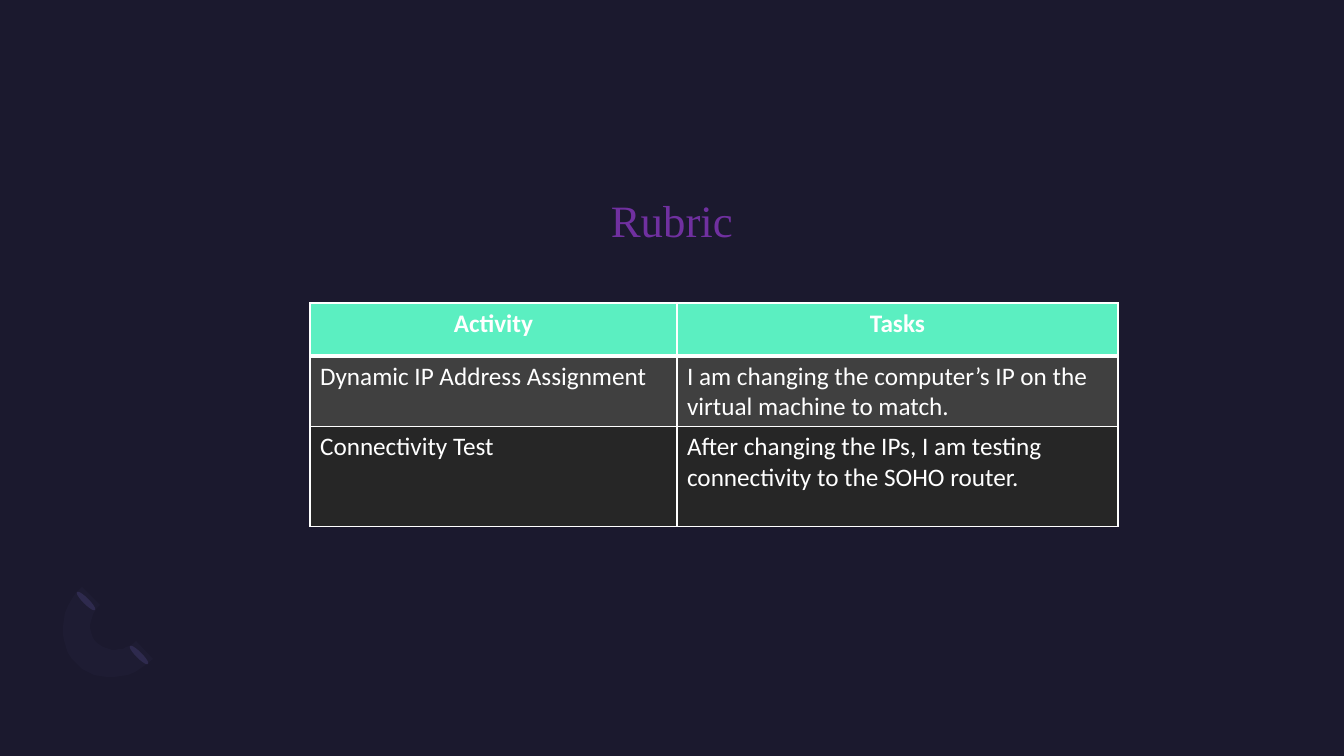
from lxml import etree
from pptx import Presentation
from pptx.dml.color import RGBColor
from pptx.enum.shapes import MSO_SHAPE
from pptx.enum.text import MSO_ANCHOR, PP_ALIGN
from pptx.oxml.ns import qn
from pptx.util import Pt

OVAL = MSO_SHAPE.OVAL
MID = MSO_ANCHOR.MIDDLE
CENTER, LEFT = PP_ALIGN.CENTER, PP_ALIGN.LEFT

COLORS = {
    "back": "1B192E", "title": "7030A0", "text": "FFFFFF", "head": "5BEFC1",
    "odd": "404040", "even": "262626", "oval": "2C284A", "arc": "7771B2",
}
TITLE = "Rubric"
ROWS = [
    ("Activity", "Tasks"),
    ("Dynamic IP Address Assignment",
     "I am changing the computer’s IP on the virtual machine to match."),
    ("Connectivity Test",
     "After changing the IPs, I am testing connectivity to the SOHO router."),
]
FILLS = ["head", "odd", "even"]
TITLE_BOX = (540, 200, 264, 47)
TABLE_AT = (310, 303)
WIDTHS = [367, 441]
HEIGHTS = [53, 70, 100]
OVALS = [(136, 642), (83, 588)]
OVAL_SIZE = (6, 26)
ARC = [
    [(77, 664), (56, 644), (58, 610), (82, 587)],
    [(100, 605), (88, 616), (87, 634), (97, 643)],
    [(97, 643), (107, 653), (124, 652), (136, 641)],
    [(153, 659), (131, 681), (96, 684), (77, 664)],
]
STEPS = 12
ARC_ALPHA = 4
TITLE_FORMAT = {"name": "Times New Roman", "size": Pt(32)}
CELL_FORMAT = {"name": "Calibri", "size": Pt(18)}
PAR_FORMAT = {"line_spacing": 0.9, "space_before": Pt(10), "space_after": Pt(8)}
SCALE = 914400 / 100.8


def px(*vals):
    return [round(v * SCALE) for v in vals]


def rgb(name):
    return RGBColor.from_string(COLORS[name])


def apply(item, vals):
    for key, val in vals.items():
        setattr(item, key, val)


def paint(shape, name):
    shape.shadow.inherit = False
    shape.fill.solid()
    shape.fill.fore_color.rgb = rgb(name)
    shape.line.fill.background()


def write(frame, text, form, color, align):
    par = frame.paragraphs[0]
    par.alignment = align
    run = par.add_run()
    run.text = text
    apply(run.font, form)
    run.font.color.rgb = rgb(color)
    return par


def curve(pts):
    for step in range(STEPS + 1):
        t = step / STEPS
        parts = ((1 - t) ** 3, 3 * t * (1 - t) ** 2, 3 * t * t * (1 - t), t ** 3)
        yield tuple(sum(w * p[axis] for w, p in zip(parts, pts)) for axis in (0, 1))


def border(cell, sides):
    props = cell._tc.get_or_add_tcPr()
    for spot, (side, width) in enumerate(sides.items()):
        line = etree.Element(qn("a:ln" + side), w=str(Pt(width)))
        fill = etree.SubElement(line, qn("a:solidFill"))
        etree.SubElement(fill, qn("a:srgbClr"), val=COLORS["text"])
        props.insert(spot, line)


def add_decor(shapes):
    for left, top in OVALS:
        oval = shapes.add_shape(OVAL, *px(left, top, *OVAL_SIZE))
        oval.rotation = 135
        paint(oval, "oval")
    pts = [pt for part in ARC for pt in curve(part)]
    form = shapes.build_freeform(*pts[0], scale=SCALE)
    form.add_line_segments(pts[1:], close=True)
    arc = form.convert_to_shape()
    paint(arc, "arc")
    tint = arc._element.spPr.find(qn("a:solidFill"))[0]
    etree.SubElement(tint, qn("a:alpha"), val=str(ARC_ALPHA * 1000))


def add_title(shapes):
    frame = shapes.add_textbox(*px(*TITLE_BOX)).text_frame
    apply(frame, {"word_wrap": True, "vertical_anchor": MID, "margin_left": 0,
                  "margin_right": 0, "margin_top": 0, "margin_bottom": 0})
    par = write(frame, TITLE, TITLE_FORMAT, "title", CENTER)
    apply(par, PAR_FORMAT)


def add_grid(shapes):
    size = (sum(WIDTHS), sum(HEIGHTS))
    table = shapes.add_table(len(ROWS), len(WIDTHS), *px(*TABLE_AT, *size)).table
    for col, width in zip(table.columns, px(*WIDTHS)):
        col.width = width
    for row, height in zip(table.rows, px(*HEIGHTS)):
        row.height = height
    for r, texts in enumerate(ROWS):
        head = r == 0
        for c, text in enumerate(texts):
            cell = table.cell(r, c)
            cell.fill.solid()
            cell.fill.fore_color.rgb = rgb(FILLS[r])
            border(cell, {"L": 1, "R": 1, "T": 3 if r == 1 else 1, "B": 3 if head else 1})
            write(cell.text_frame, text, {**CELL_FORMAT, "bold": head},
                  "text", CENTER if head else LEFT)


def main():
    deck = Presentation()
    deck.slide_width, deck.slide_height = px(1344, 756)
    slide = deck.slides.add_slide(deck.slide_layouts[6])
    back = slide.background.fill
    back.solid()
    back.fore_color.rgb = rgb("back")
    add_decor(slide.shapes)
    add_title(slide.shapes)
    add_grid(slide.shapes)
    deck.save("out.pptx")


if __name__ == "__main__":
    main()
